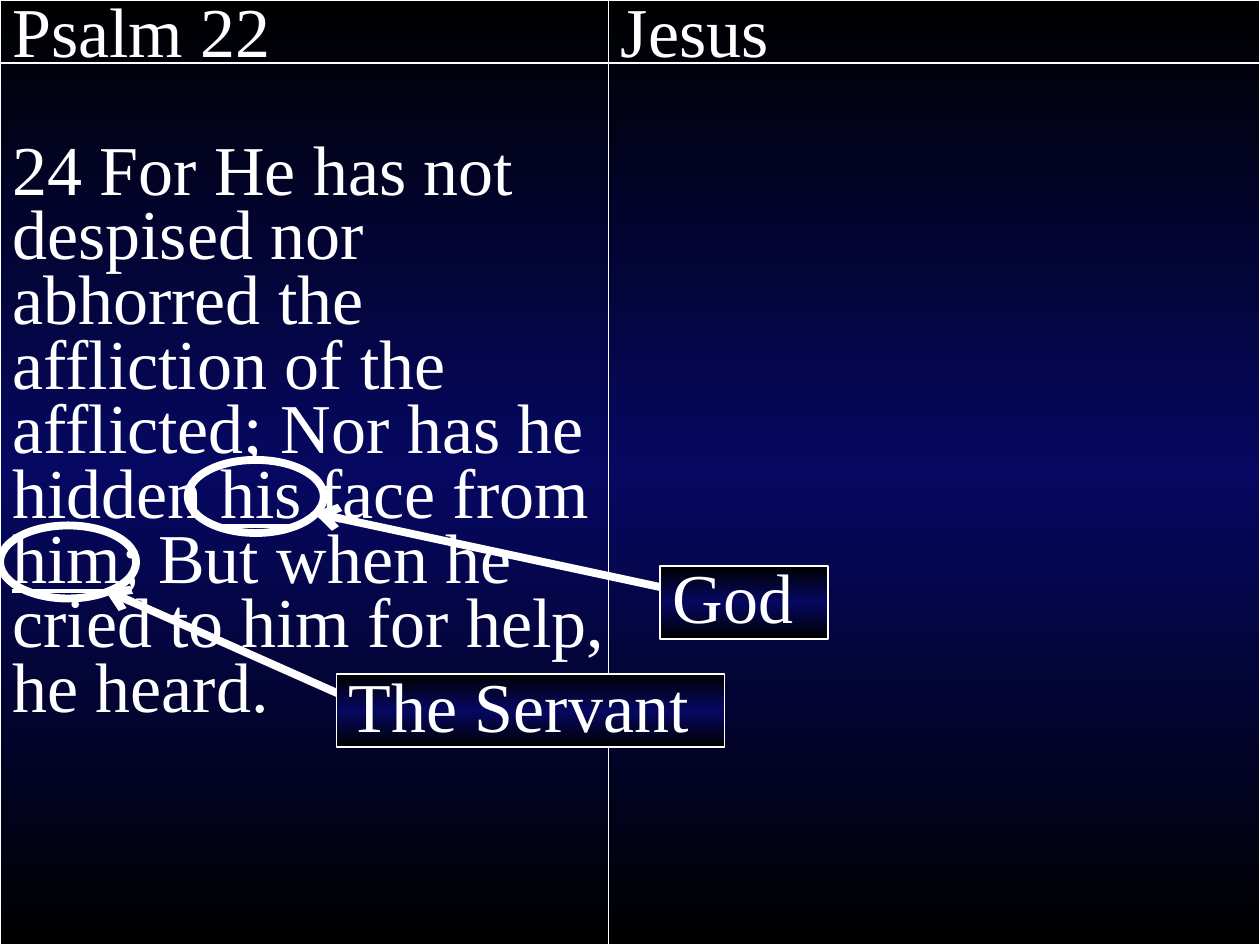
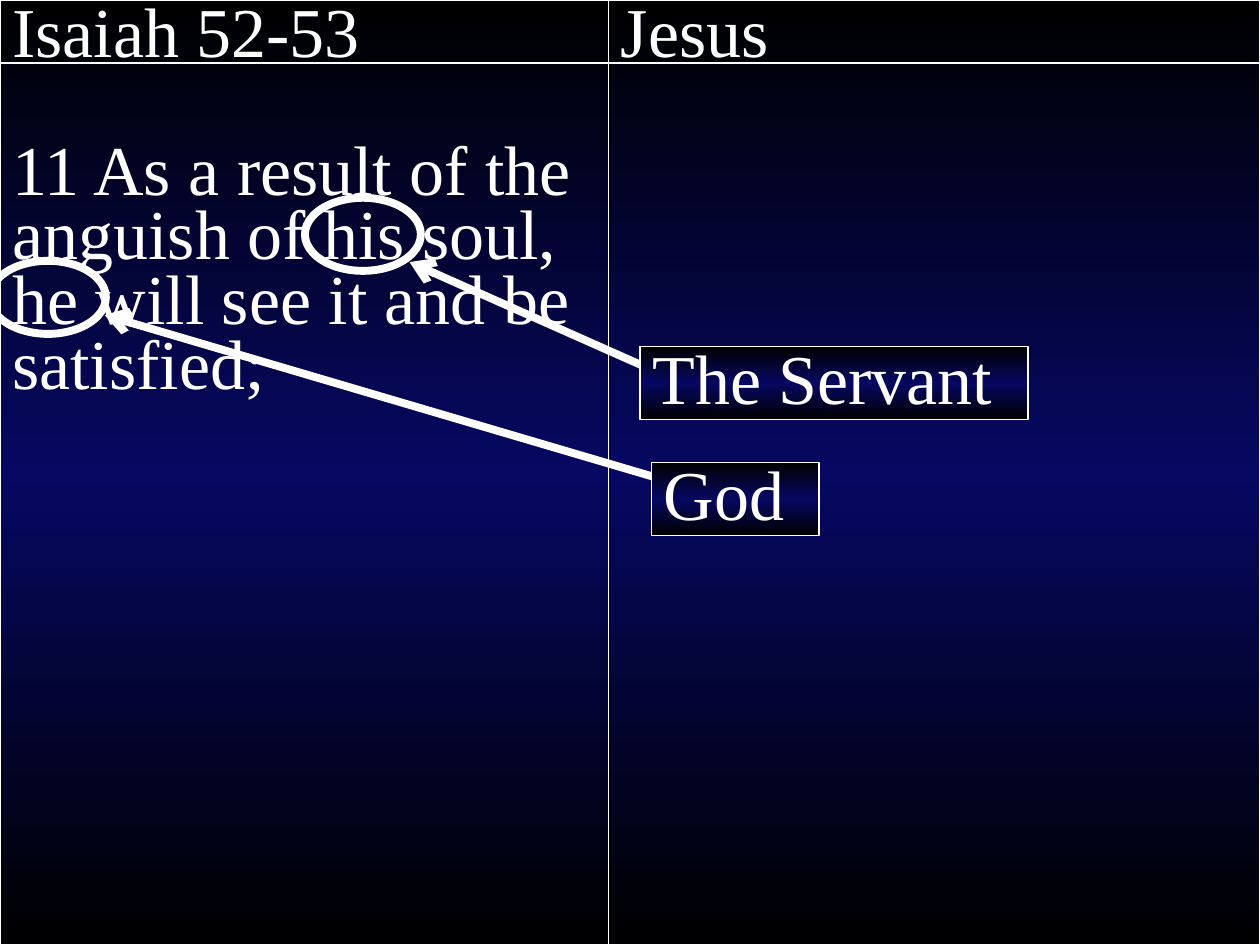
import copy

import pptx
import pptx.dml.color
import pptx.enum.shapes
import pptx.enum.text
import pptx.oxml
import pptx.oxml.ns
import pptx.util
from pptx.util import Inches

# Content: verses are (text, underlined) runs; places are in inches
SLIDES = [
    {
        "passage": "Psalm 22",
        "verse": [
            ("24 For He has not despised nor abhorred the affliction of the "
             "afflicted; Nor has he hidden ", False),
            ("his", True),
            (" face from ", False),
            ("him", True),
            ("; But when he cried to him for help, he heard.", False),
        ],
        "ring_width": 1.08,
        "rings": [(0, 4.17), (1.49, 3.65)],
        "arrows": [((3.08, 5.68), (0.83, 4.68)), ((5.99, 4.82), (2.49, 4.07))],
        "labels": [("The Servant", 2.67, 5.35), ("God", 5.24, 4.49)],
    },
    {
        "passage": "Isaiah 52-53",
        "verse": [("11 As a result of the anguish of his soul, he will see it "
                   "and be satisfied;", False)],
        "ring_width": 0.92,
        "rings": [(-0.08, 2.07), (2.42, 1.57)],
        "arrows": [((5.5, 3.08), (3.25, 2.08)), ((5.92, 4), (0.83, 2.5))],
        "labels": [("The Servant", 5.08, 2.75), ("God", 5.17, 3.67)],
    },
]
FULFILMENT = "Jesus"

# Shared style
WHITE = "FFFFFF"
BACKDROP = ("0000F8", "00004A")
PANEL_EDGE, PANEL_MIDDLE = "000000", "060862"
FONT, TEXT_SIZE, LINE_SPACING = "Times New Roman", 40, 0.77
PARAGRAPH_GAP, VERSE_GAP = 2.2, 41.4
THIN, RULE, HEAVY = 1, 1.5, 4.5

# Shared layout
WIDTH, HEIGHT = 10, 7.5
PASSAGE_WIDTH, JESUS_LEFT = 4.92, 4.83
RULE_TOP = 0.5
MARK_HEIGHT = 0.58
LABEL_WIDTHS = {"The Servant": 3.08, "God": 1.33}


def color(hex_code):
    return pptx.dml.color.RGBColor.from_string(hex_code)


def fill_gradient(fill, first, last):
    fill.gradient()
    fill.gradient_angle = 270
    for stop, hex_code in zip(fill.gradient_stops, (first, last)):
        stop.color.rgb = color(hex_code)


def add_middle_stop(shape, hex_code):
    stops = shape._element.spPr.find(".//" + pptx.oxml.ns.qn("a:gsLst"))
    middle = copy.deepcopy(stops[0])
    middle.set("pos", "50000")
    middle[0].set("val", hex_code)
    stops.insert(1, middle)


def outline(line, points):
    line.color.rgb = color(WHITE)
    line.width = pptx.util.Pt(points)


def add_outlined(slide, kind, place, points):
    shape = slide.shapes.add_shape(kind, *map(Inches, place))
    shape.shadow.inherit = False
    outline(shape.line, points)
    return shape


def add_panel(slide, place, *paragraphs):
    """Gradient box; each paragraph is (space before, runs)."""
    panel = add_outlined(slide, pptx.enum.shapes.MSO_SHAPE.RECTANGLE, place, THIN)
    fill_gradient(panel.fill, PANEL_EDGE, PANEL_EDGE)
    add_middle_stop(panel, PANEL_MIDDLE)
    frame = panel.text_frame
    frame.word_wrap = True
    frame.vertical_anchor = pptx.enum.text.MSO_ANCHOR.TOP
    for index, (gap, runs) in enumerate(paragraphs):
        paragraph = frame.add_paragraph() if index else frame.paragraphs[0]
        paragraph.alignment = pptx.enum.text.PP_ALIGN.LEFT
        paragraph.line_spacing = LINE_SPACING
        paragraph.space_before = pptx.util.Pt(gap)
        paragraph.font.name = FONT
        paragraph.font.size = pptx.util.Pt(TEXT_SIZE)
        paragraph.font.color.rgb = color(WHITE)
        for text, underlined in runs:
            run = paragraph.add_run()
            run.text = text
            if underlined:
                run.font.underline = True


def heading(text):
    return PARAGRAPH_GAP, [(text, False)]


def add_ring(slide, left, top, width):
    ring = add_outlined(slide, pptx.enum.shapes.MSO_SHAPE.OVAL,
                        (left, top, width, MARK_HEIGHT), HEAVY)
    ring.fill.background()


def add_line(slide, start, end, points, arrow=False):
    line = slide.shapes.add_connector(pptx.enum.shapes.MSO_CONNECTOR.STRAIGHT,
                                      *map(Inches, start + end))
    outline(line.line, points)
    if arrow:
        head = pptx.oxml.parse_xml(
            f'<a:tailEnd {pptx.oxml.ns.nsdecls("a")} type="arrow"/>')
        line.line._get_or_add_ln().append(head)
    line._element.spPr.append(
        pptx.oxml.parse_xml(f'<a:effectLst {pptx.oxml.ns.nsdecls("a")}/>'))


def build_slide(deck, content):
    slide = deck.slides.add_slide(deck.slide_layouts[6])

    # Two columns under a rule
    add_panel(slide, (0, 0, PASSAGE_WIDTH, HEIGHT),
              heading(content["passage"]), (VERSE_GAP, content["verse"]))
    add_panel(slide, (JESUS_LEFT, 0, WIDTH - JESUS_LEFT, HEIGHT),
              heading(FULFILMENT))
    add_line(slide, (0, RULE_TOP), (WIDTH, RULE_TOP), RULE)

    # Ringed pronouns and whom they mean
    for left, top in content["rings"]:
        add_ring(slide, left, top, content["ring_width"])
    for start, end in content["arrows"]:
        add_line(slide, start, end, HEAVY, arrow=True)
    for label, left, top in content["labels"]:
        add_panel(slide, (left, top, LABEL_WIDTHS[label], MARK_HEIGHT),
                  heading(label))


def main():
    deck = pptx.Presentation()
    deck.slide_width, deck.slide_height = Inches(WIDTH), Inches(HEIGHT)
    fill_gradient(deck.slide_master.background.fill, *BACKDROP)
    for content in SLIDES:
        build_slide(deck, content)
    deck.save("out.pptx")


if __name__ == "__main__":
    main()
